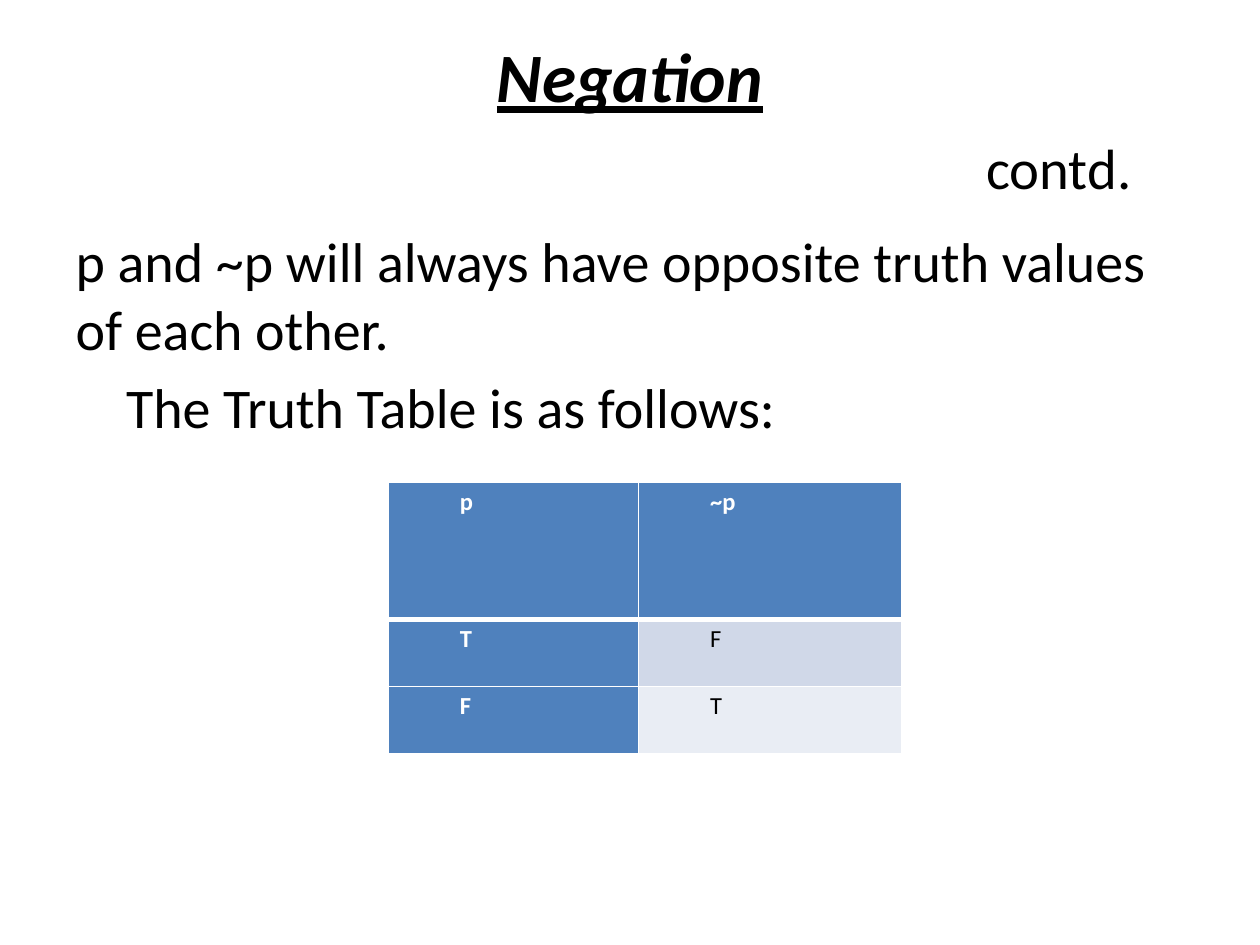
from dataclasses import dataclass

from lxml.etree import SubElement
from pptx import Presentation
from pptx.dml.color import RGBColor
from pptx.enum.text import MSO_ANCHOR, MSO_AUTO_SIZE, PP_ALIGN
from pptx.oxml.ns import qn
from pptx.util import Inches, Pt


@dataclass(frozen=True)
class Theme:
    font: str = "Calibri"
    text: str = "000000"
    light: str = "FFFFFF"
    accent: str = "4F81BD"
    bands: tuple = ("D0D8E8", "E9EDF4")
    title_size: float = 39.6
    continued_size: float = 32.4
    title_line: float = 48
    body_size: float = 32
    table_size: float = 14
    rule: float = 1
    header_rule: float = 3


THEME = Theme()
TITLE_BOX = (Inches(0.5), Inches(0.3), Inches(9), Inches(1.25))
BODY_BOX = (Inches(0.5), Inches(1.75), Inches(9), Inches(4.95))
TABLE_BOX = (Inches(3.08), Inches(3.83), Inches(4.08), Inches(2.15))
COLUMN_SHARES = (0.487, 0.513)
ROW_SHARES = (0.506, 0.247, 0.247)
TRUTH_TABLE = (("p", "~p"), ("T", "F"), ("F", "T"))


def place(shape, box):
    shape.left, shape.top, shape.width, shape.height = box


def add_run(paragraph, text, size, color=THEME.text, bold=False):
    run = paragraph.add_run()
    run.text = text
    run.font.name = THEME.font
    run.font.size = Pt(size)
    run.font.bold = bold
    run.font.color.rgb = RGBColor.from_string(color)
    return run


def set_indent(paragraph, left=0, right=0):
    properties = paragraph._p.get_or_add_pPr()
    properties.set("marL", str(Inches(left)))
    properties.set("marR", str(Inches(right)))
    properties.set("indent", "0")


def fill_title(title, box):
    place(title, box)
    frame = title.text_frame
    frame.auto_size = MSO_AUTO_SIZE.NONE
    frame.vertical_anchor = MSO_ANCHOR.MIDDLE

    heading = frame.paragraphs[0]
    heading.alignment = PP_ALIGN.CENTER
    run = add_run(heading, "Negation", THEME.title_size, bold=True)
    run.font.italic = run.font.underline = True

    continued = frame.add_paragraph()
    continued.alignment = PP_ALIGN.RIGHT
    set_indent(continued, right=0.42)
    add_run(continued, "contd.", THEME.continued_size)

    for paragraph in frame.paragraphs:
        paragraph.line_spacing = Pt(THEME.title_line)


def fill_body(body, box):
    place(body, box)
    frame = body.text_frame
    frame.auto_size = MSO_AUTO_SIZE.NONE
    lines = (
        ("p and ~p will always have opposite truth values of each other.", 0),
        ("The Truth Table is as follows:", 0.4),
    )
    for index, (text, indent) in enumerate(lines):
        paragraph = frame.add_paragraph() if index else frame.paragraphs[0]
        set_indent(paragraph, left=indent)
        SubElement(paragraph._p.get_or_add_pPr(), qn("a:buNone"))
        add_run(paragraph, text, THEME.body_size)


def set_borders(cell, top, bottom):
    widths = {"lnL": THEME.rule, "lnR": THEME.rule, "lnT": top, "lnB": bottom}
    properties = cell._tc.get_or_add_tcPr()
    for side, width in widths.items():
        line = SubElement(properties, qn(f"a:{side}"), w=str(Pt(width)))
        color = SubElement(SubElement(line, qn("a:solidFill")), qn("a:srgbClr"))
        color.set("val", THEME.light)


def fill_cell(cell, text, row, column):
    is_header = row == 0 or column == 0
    cell.margin_left = cell.margin_right = Inches(0.07)
    cell.margin_top = cell.margin_bottom = 0
    set_borders(
        cell,
        top=THEME.header_rule if row == 1 else THEME.rule,
        bottom=THEME.header_rule if row == 0 else THEME.rule,
    )
    cell.fill.solid()
    fill = THEME.accent if is_header else THEME.bands[row - 1]
    cell.fill.fore_color.rgb = RGBColor.from_string(fill)
    paragraph = cell.text_frame.paragraphs[0]
    set_indent(paragraph, left=0.5)
    paragraph.line_spacing = 1.15
    color = THEME.light if is_header else THEME.text
    add_run(paragraph, text, THEME.table_size, color, bold=is_header)


def add_truth_table(slide, box):
    frame = slide.shapes.add_table(len(ROW_SHARES), len(COLUMN_SHARES), *box)
    table = frame.table
    table.first_col = True
    for column, share in zip(table.columns, COLUMN_SHARES):
        column.width = int(box[2] * share)
    for row, share in zip(table.rows, ROW_SHARES):
        row.height = int(box[3] * share)
    for row, values in enumerate(TRUTH_TABLE):
        for column, text in enumerate(values):
            fill_cell(table.cell(row, column), text, row, column)


def main():
    presentation = Presentation()
    presentation.slide_width = Inches(10)
    presentation.slide_height = Inches(7.5)
    slide = presentation.slides.add_slide(presentation.slide_layouts[1])
    fill_title(slide.shapes.title, TITLE_BOX)
    fill_body(slide.placeholders[1], BODY_BOX)
    add_truth_table(slide, TABLE_BOX)
    presentation.save("out.pptx")


if __name__ == "__main__":
    main()
